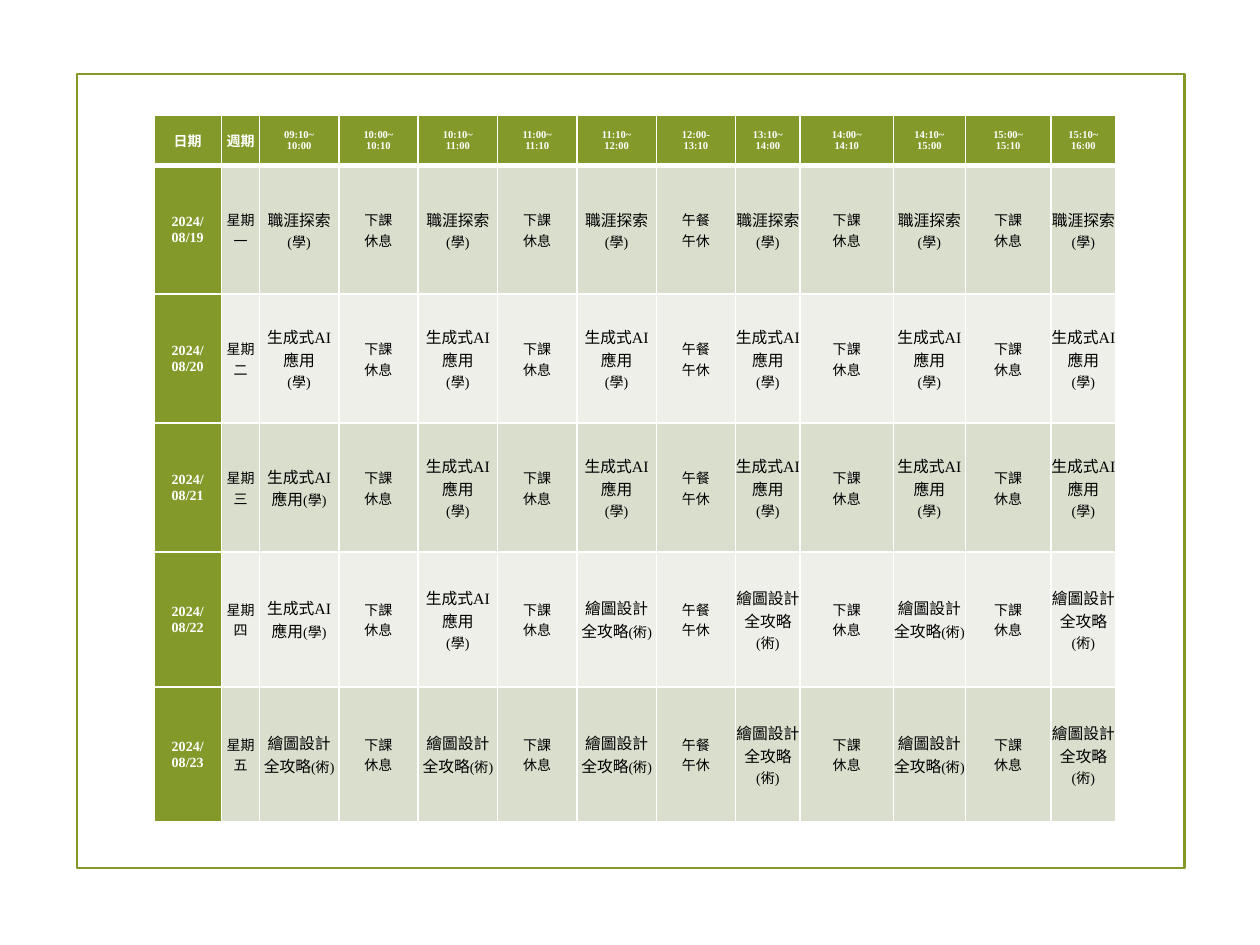
import pptx
import pptx.dml.color
import pptx.enum.shapes
import pptx.enum.text
import pptx.oxml
import pptx.oxml.ns
import pptx.util

Cm = pptx.util.Cm
Pt = pptx.util.Pt

FONT = "Times New Roman"
GREEN, WHITE, BLACK = "83992A", "FFFFFF", "000000"
BANDS = ("D9DECD", "EDEFE8")
COL_WIDTHS = [1.37, 0.76] + [1.6] * 6 + [1.3, 1.88, 1.45, 1.73, 1.3]
ROW_HEIGHTS = [1, 2.6, 2.6, 2.6, 2.72, 2.72]
PADDED_COLS = 8

HEADINGS = ["日期", "週期", "09:10~\n10:00", "10:00~\n10:10", "10:10~\n11:00",
            "11:00~\n11:10", "11:10~\n12:00", "12:00-\n13:10", "13:10~\n14:00",
            "14:00~\n14:10", "14:10~\n15:00", "15:00~\n15:10", "15:10~\n16:00"]
BREAK, LUNCH = "下課\n休息", "午餐\n午休"
CAREER = "職涯探索\n(學)"
AI = "生成式AI應用\n(學)"
AI_INLINE = "生成式AI應用(學)"
DESIGN = "繪圖設計全攻略(術)"
DAYS = [
    ("2024/\n08/19", "星期一", [CAREER] * 6),
    ("2024/\n08/20", "星期二", [AI] * 6),
    ("2024/\n08/21", "星期三", [AI_INLINE] + [AI] * 5),
    ("2024/\n08/22", "星期四", [AI_INLINE, AI] + [DESIGN] * 4),
    ("2024/\n08/23", "星期五", [DESIGN] * 6),
]


def rgb(color):
    return pptx.dml.color.RGBColor.from_string(color)


def add_frame(s):
    sp = s.shapes.add_shape(pptx.enum.shapes.MSO_SHAPE.RECTANGLE,
                            Cm(1.55), Cm(1.5), Cm(22.33), Cm(16))
    sp.shadow.inherit = False
    sp.fill.background()
    sp.line.color.rgb = rgb(GREEN)
    sp.line.width = Pt(1.25)


def set_borders(cell, top, bottom):
    tc_pr = cell._tc.get_or_add_tcPr()
    for side, width in (("L", 1), ("R", 1), ("T", top), ("B", bottom)):
        tc_pr.append(pptx.oxml.parse_xml(
            f'<a:ln{side} {pptx.oxml.ns.nsdecls("a")} w="{Pt(width)}">'
            f'<a:solidFill><a:srgbClr val="{WHITE}"/></a:solidFill></a:ln{side}>'))


def style_cell(cell, row, col):
    set_borders(cell, 3 if row == 1 else 1, 3 if row == 0 else 1)
    cell.fill.solid()
    heading = row == 0 or col == 0
    cell.fill.fore_color.rgb = rgb(GREEN if heading else BANDS[(row - 1) % 2])
    cell.vertical_anchor = pptx.enum.text.MSO_ANCHOR.MIDDLE
    cell.margin_left = cell.margin_right = Cm(0.03 if col < PADDED_COLS else 0)
    cell.margin_top = cell.margin_bottom = 0


def write_cell(cell, text, size, color, bold):
    tf = cell.text_frame
    tf.text = text
    for p in tf.paragraphs:
        p.alignment = pptx.enum.text.PP_ALIGN.CENTER
        subject, bracket, kind = p.text.partition("(")
        if subject and bracket:
            p.runs[0].text = subject
            p.add_run().text = bracket + kind
        for r in p.runs:
            r.font.name = FONT
            r.font.size = Pt(8 if r.text.startswith("(") else size)
            r.font.bold = bold
            r.font.color.rgb = rgb(color)


def text_size(row, col, text):
    if row == 0 and col > 1:
        return 6
    return 9 if "(" in text else 8


def day_row(date, weekday, lessons):
    a, b, c, d, e, f = lessons
    return [date, weekday, a, BREAK, b, BREAK, c, LUNCH, d, BREAK, e, BREAK, f]


def add_timetable(s):
    rows = [HEADINGS] + [day_row(*day) for day in DAYS]
    table = s.shapes.add_table(len(rows), len(HEADINGS), Cm(3.1), Cm(2.33),
                               Cm(sum(COL_WIDTHS)), Cm(sum(ROW_HEIGHTS))).table
    for column, width in zip(table.columns, COL_WIDTHS):
        column.width = Cm(width)
    for row, height in zip(table.rows, ROW_HEIGHTS):
        row.height = Cm(height)
    for i, texts in enumerate(rows):
        for j, text in enumerate(texts):
            cell = table.cell(i, j)
            heading = i == 0 or j == 0
            style_cell(cell, i, j)
            write_cell(cell, text, text_size(i, j, text),
                       WHITE if heading else BLACK, heading)


def main():
    prs = pptx.Presentation()
    prs.slide_width, prs.slide_height = Cm(25.4), Cm(19.05)
    s = prs.slides.add_slide(prs.slide_layouts[6])
    add_frame(s)
    add_timetable(s)
    prs.save("out.pptx")


if __name__ == "__main__":
    main()
